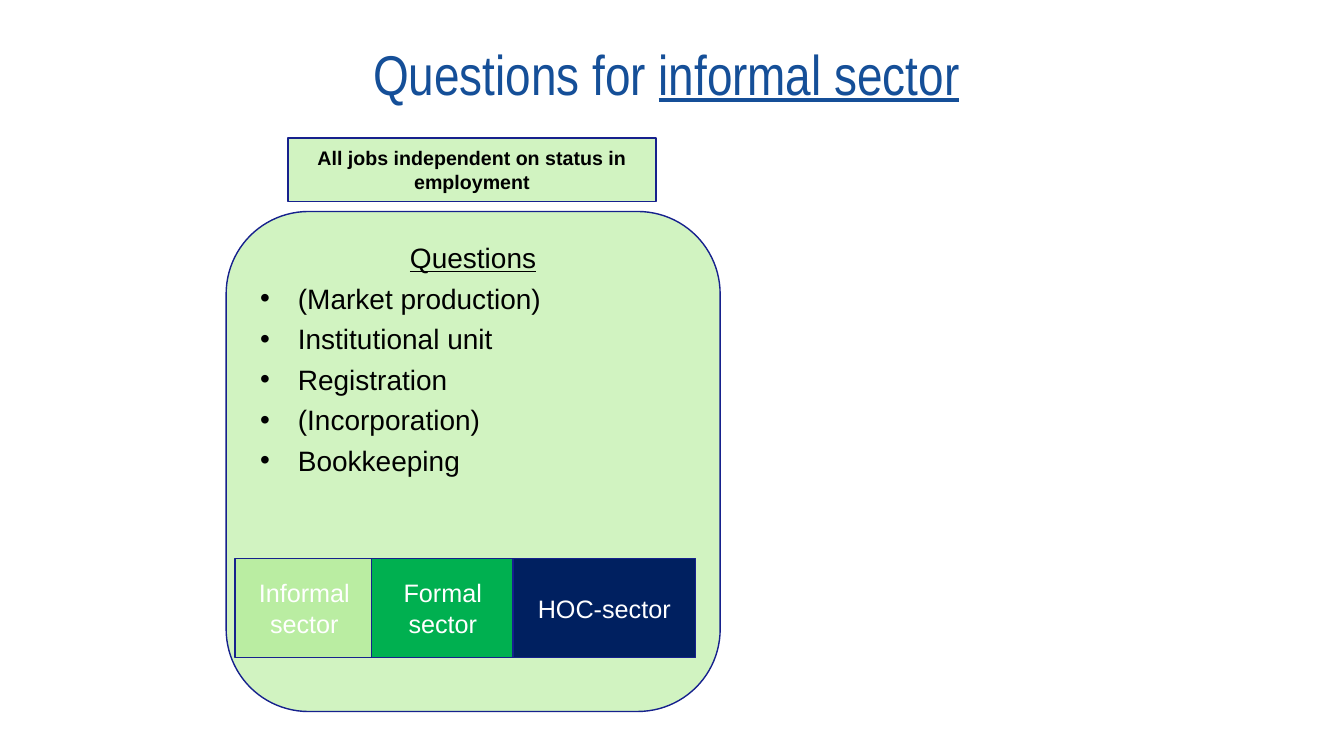
from lxml import etree
from pptx import Presentation
from pptx.dml.color import RGBColor
from pptx.enum.shapes import MSO_SHAPE as Shape
from pptx.enum.text import MSO_ANCHOR as Anchor, PP_ALIGN as Align
from pptx.oxml.ns import qn
from pptx.util import Cm, Pt


def color(value):
    return RGBColor.from_string(value)


def add_panel(kind, left, top, width, height, fill):
    panel = page.shapes.add_shape(kind, Cm(left), Cm(top), Cm(width), Cm(height))
    panel.shadow.inherit = False
    panel.fill.solid()
    panel.fill.fore_color.rgb = color(fill)
    panel.line.color.rgb = color("16218D")
    panel.line.width = Pt(1)
    panel.text_frame.word_wrap = True
    return panel.text_frame


deck = Presentation()
deck.slide_width, deck.slide_height = Cm(33.87), Cm(19.05)
page = deck.slides.add_slide(deck.slide_layouts[5])

title = page.shapes.title
title.left, title.top, title.width, title.height = Cm(9.4), Cm(1.19), Cm(29.16), Cm(2.01)
frame = title.text_frame
frame.margin_left = frame.margin_top = frame.margin_right = frame.margin_bottom = 0
frame.vertical_anchor = Anchor.TOP
para = frame.paragraphs[0]
para.alignment = Align.LEFT
para.line_spacing = 0.9
for text, underlined in [("Questions for ", False), ("informal sector", True)]:
    span = para.add_run()
    span.text = text
    span.font.name = "Arial Narrow"
    span.font.size = Pt(40)
    span.font.color.rgb = color("154F98")
    span.font.underline = underlined

frame = add_panel(Shape.ROUNDED_RECTANGLE, 5.7, 5.33, 12.45, 12.6, "D1F3C1")
frame.vertical_anchor = Anchor.TOP
questions = ["Questions", "(Market production)", "Institutional unit",
             "Registration", "(Incorporation)", "Bookkeeping"]
for index, text in enumerate(questions):
    if index == 0:
        para = frame.paragraphs[0]
        para.alignment = Align.CENTER
    else:
        para = frame.add_paragraph()
        para.alignment = Align.LEFT
        para.space_before = Pt(5)
        props = para._p.get_or_add_pPr()
        props.set("marL", str(Cm(0.95)))
        props.set("indent", str(-Cm(0.95)))
        etree.SubElement(props, qn("a:buFont"), typeface="Arial")
        etree.SubElement(props, qn("a:buChar"), char="•")
    span = para.add_run()
    span.text = text
    span.font.name = "Arial"
    span.font.size = Pt(20)
    span.font.color.rgb = color("000000")
    span.font.underline = index == 0

labels = [
    ("Informal sector", 5.92, 14.07, 3.5, 2.5, "BAEDA2", "FFFFFF", 18, False),
    ("Formal sector", 9.37, 14.07, 3.58, 2.5, "00B050", "FFFFFF", 18, False),
    ("HOC-sector", 12.93, 14.07, 4.6, 2.5, "002060", "FFFFFF", 18, False),
    ("All jobs independent on status in employment",
     7.26, 3.48, 9.27, 1.6, "D1F3C1", "000000", 14, True),
]
for text, left, top, width, height, fill, ink, size, bold in labels:
    frame = add_panel(Shape.RECTANGLE, left, top, width, height, fill)
    frame.vertical_anchor = Anchor.MIDDLE
    para = frame.paragraphs[0]
    para.alignment = Align.CENTER
    span = para.add_run()
    span.text = text
    span.font.name = "Arial"
    span.font.size = Pt(size)
    span.font.bold = bold
    span.font.color.rgb = color(ink)

deck.save("out.pptx")
